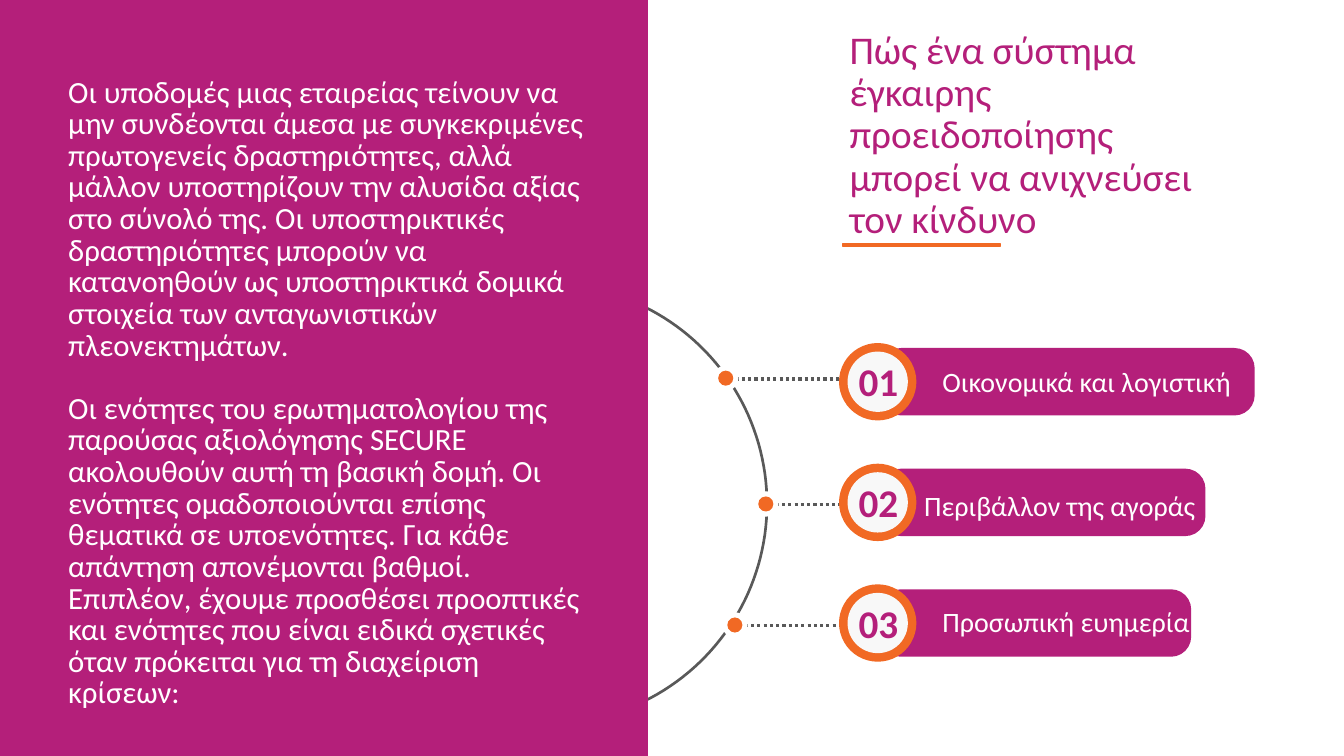
import math
from dataclasses import dataclass

import lxml.etree
import pptx
import pptx.dml.color
import pptx.enum.dml
import pptx.enum.shapes
import pptx.enum.text
import pptx.oxml.ns
import pptx.util

Cm, Pt = pptx.util.Cm, pptx.util.Pt
RGBColor = pptx.dml.color.RGBColor
SHAPE = pptx.enum.shapes.MSO_SHAPE
ANCHOR = pptx.enum.text.MSO_ANCHOR
AUTO = pptx.enum.text.MSO_AUTO_SIZE

MAGENTA = RGBColor(0xB4, 0x1F, 0x7A)
ORANGE = RGBColor(0xF1, 0x69, 0x24)
GREY = RGBColor(0x59, 0x59, 0x59)
PALE = RGBColor(0xF8, 0xF8, 0xF8)
WHITE = RGBColor(0xFF, 0xFF, 0xFF)
FONT = "Calibri"

# Layout, in centimetres
ARC_X, ARC_Y, ARC_R = 13.79, 12.7, 5.54
BADGE_X, FIRST_Y, PITCH = 22.12, 9.62, 3.04
BAR_X, BAR_H = 22.2, 1.7


@dataclass
class Topic:
    label: str
    bar_w: float
    label_x: float
    label_dy: float
    label_w: float
    dot_x: float
    dot_y: float
    link_end: float


TOPICS = [
    Topic("Οικονομικά και λογιστική", 9.42, 23.5, 0.05, 10.87, 18.29, 9.53, 22.89),
    Topic("Περιβάλλον της αγοράς", 8.18, 23.04, 0.13, 8.18, 19.3, 12.7, 22.83),
    Topic("Προσωπική ευημερία", 7.82, 23.5, 0.01, 7.82, 18.52, 15.75, 23.24),
]

INTRO = [
    "Οι υποδομές μιας εταιρείας τείνουν να μην συνδέονται άμεσα με συγκεκριμένες "
    "πρωτογενείς δραστηριότητες, αλλά μάλλον υποστηρίζουν την αλυσίδα αξίας στο σύνολό "
    "της. Οι υποστηρικτικές δραστηριότητες μπορούν να κατανοηθούν ως υποστηρικτικά "
    "δομικά στοιχεία των ανταγωνιστικών πλεονεκτημάτων.",
    "Οι ενότητες του ερωτηματολογίου της παρούσας αξιολόγησης SECURE ακολουθούν αυτή τη "
    "βασική δομή. Οι ενότητες ομαδοποιούνται επίσης θεματικά σε υποενότητες. Για κάθε "
    "απάντηση απονέμονται βαθμοί. Επιπλέον, έχουμε προσθέσει προοπτικές και ενότητες που "
    "είναι ειδικά σχετικές όταν πρόκειται για τη διαχείριση κρίσεων:",
]
TITLE = "Πώς ένα σύστημα έγκαιρης προειδοποίησης μπορεί να ανιχνεύσει τον κίνδυνο"


def add_text(shapes, paragraphs: list[str], x: float, y: float, w: float, h: float, *,
             size: float, color: RGBColor, bold: bool = False, spacing=None,
             gap: float = 0, anchor=ANCHOR.TOP, auto_size=AUTO.NONE) -> None:
    tf = shapes.add_textbox(Cm(x), Cm(y), Cm(w), Cm(h)).text_frame
    tf.word_wrap = True
    tf.auto_size = auto_size
    tf.vertical_anchor = anchor
    for i, text in enumerate(paragraphs):
        p = tf.add_paragraph() if i else tf.paragraphs[0]
        if i:
            p.space_before = Pt(gap)
        if spacing is not None:
            p.line_spacing = spacing
        r = p.add_run()
        r.text = text
        r.font.name, r.font.size, r.font.bold = FONT, Pt(size), bold
        r.font.color.rgb = color


def add_block(shapes, kind, x: float, y: float, w: float, h: float, fill: RGBColor):
    sp = shapes.add_shape(kind, Cm(x), Cm(y), Cm(w), Cm(h))
    sp.shadow.inherit = False
    sp.fill.solid()
    sp.fill.fore_color.rgb = fill
    sp.line.fill.background()
    return sp


def add_disc(shapes, cx: float, cy: float, d: float, fill: RGBColor) -> None:
    add_block(shapes, SHAPE.OVAL, cx - d / 2, cy - d / 2, d, d, fill)


def add_arc(shapes, steps: int = 90) -> None:
    angles = [math.pi * (i / steps - 0.5) for i in range(steps + 1)]
    points = [(Cm(ARC_X + ARC_R * math.cos(a)), Cm(ARC_Y + ARC_R * math.sin(a)))
              for a in angles]
    fb = shapes.build_freeform(*points[0])
    fb.add_line_segments(points[1:], close=False)
    sp = fb.convert_to_shape()
    sp.shadow.inherit = False
    sp.fill.background()
    sp.line.color.rgb = GREY
    sp.line.width = Pt(1.91)


def add_link(shapes, topic: Topic) -> None:
    y = Cm(topic.dot_y + 0.02)
    cn = shapes.add_connector(pptx.enum.shapes.MSO_CONNECTOR.STRAIGHT,
                              Cm(topic.dot_x + 0.25), y, Cm(topic.link_end), y)
    cn.line.color.rgb = GREY
    cn.line.width = Pt(2.25)
    cn.line.dash_style = pptx.enum.dml.MSO_LINE.ROUND_DOT
    lxml.etree.SubElement(cn._element.spPr, pptx.oxml.ns.qn("a:effectLst"))
    add_disc(shapes, topic.dot_x, topic.dot_y, 0.64, WHITE)
    add_disc(shapes, topic.dot_x, topic.dot_y, 0.38, ORANGE)


def add_topic(shapes, topic: Topic, number: int) -> None:
    cy = FIRST_Y + (number - 1) * PITCH
    bar = add_block(shapes, SHAPE.ROUNDED_RECTANGLE, BAR_X, cy - BAR_H / 2,
                    topic.bar_w, BAR_H, MAGENTA)
    bar.adjustments[0] = 0.3
    add_text(shapes, [topic.label], topic.label_x, cy + topic.label_dy - 0.5,
             topic.label_w, 1, size=20, color=WHITE, spacing=Pt(20.4),
             anchor=ANCHOR.MIDDLE, auto_size=AUTO.SHAPE_TO_FIT_TEXT)
    add_disc(shapes, BADGE_X, cy, 1.95, ORANGE)
    add_disc(shapes, BADGE_X, cy, 1.52, PALE)
    add_text(shapes, [f"{number:02d}"], 21.39, cy - 0.73, 1.55, 1.45, size=28,
             color=MAGENTA, bold=True, auto_size=AUTO.SHAPE_TO_FIT_TEXT)


def main() -> None:
    prs = pptx.Presentation()
    prs.slide_width, prs.slide_height = Cm(33.87), Cm(19.05)
    shapes = prs.slides.add_slide(prs.slide_layouts[6]).shapes

    # Arc and left panel
    add_arc(shapes)
    add_block(shapes, SHAPE.RECTANGLE, 0, 0, 16.33, 19.05, MAGENTA)
    add_text(shapes, INTRO, 1.47, 1.83, 13.64, 17.73, size=22, color=WHITE,
             spacing=Pt(22.6), gap=22.6)

    # Dotted links and numbered topics
    for topic in TOPICS:
        add_link(shapes, topic)
    for number, topic in enumerate(TOPICS, 1):
        add_topic(shapes, topic, number)

    # Title and underline
    add_text(shapes, [TITLE], 21.16, 0.64, 9.63, 6.83, size=28, color=MAGENTA, spacing=0.9)
    rule = add_block(shapes, SHAPE.RECTANGLE, 21.23, 6.15, 3.99, 0.05, ORANGE)
    rule.line.color.rgb = ORANGE
    rule.line.width = Pt(1)

    prs.save("out.pptx")


if __name__ == "__main__":
    main()
